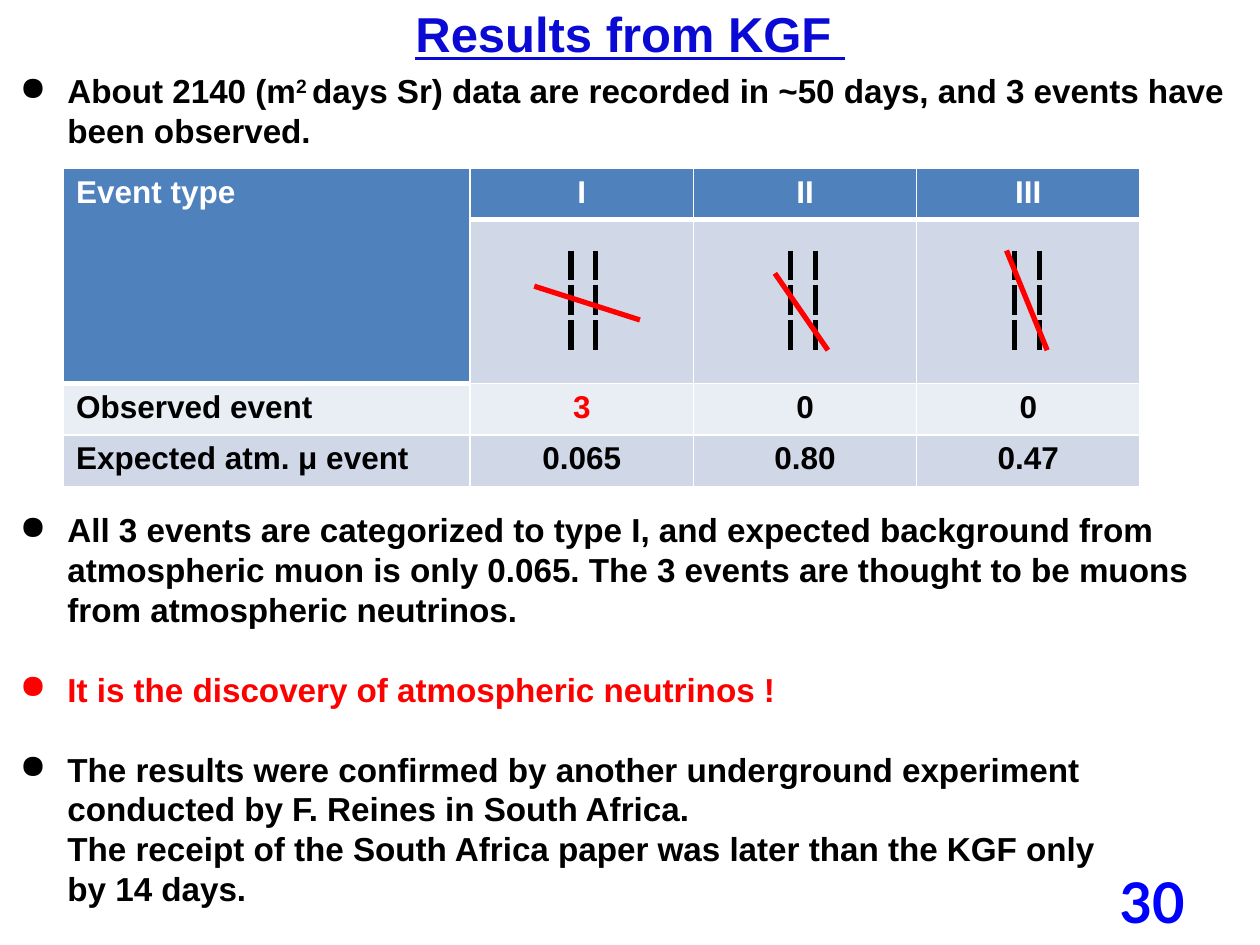
from dataclasses import dataclass

from lxml import etree
from pptx import Presentation
from pptx import util as u
from pptx.dml.color import RGBColor
from pptx.enum import shapes, text
from pptx.oxml import ns


@dataclass(frozen=True)
class Theme:
    font: str = "Arial"
    number_font: str = "Lato"
    title: str = "0A0AD4"
    number: str = "0000FF"
    ink: str = "000000"
    accent: str = "FF0000"
    white: str = "FFFFFF"
    bands: tuple = ("4F81BD", "D0D8E8", "E9EDF4", "D0D8E8")
    title_size: float = 28
    body_size: float = 19
    table_size: float = 18
    number_size: float = 32
    leading: float = 22.8
    thin: float = 1
    thick: float = 3


class SlideBuilder:
    """Holds the theme and the current slide, and draws each kind of element."""

    def __init__(self, slide, theme):
        self.slide = slide
        self.theme = theme

    def style(self, para, size, color, font=None):
        for span in para.runs:
            span.font.name = font or self.theme.font
            span.font.size = u.Pt(size)
            span.font.bold = True
            span.font.color.rgb = RGBColor.from_string(color)

    def frame(self, left, top, width, height):
        box = self.slide.shapes.add_textbox(u.Cm(left), u.Cm(top), u.Cm(width), u.Cm(height))
        box.text_frame.word_wrap = True
        return box.text_frame

    def title(self, words, *place):
        frame = self.frame(*place)
        frame.margin_left = frame.margin_right = frame.margin_top = frame.margin_bottom = 0
        frame.text = words
        para = frame.paragraphs[0]
        para.alignment = text.PP_ALIGN.CENTER
        self.style(para, self.theme.title_size, self.theme.title)
        para.runs[0].font.underline = True

    def page_number(self, words, *place):
        frame = self.frame(*place)
        frame.vertical_anchor = text.MSO_ANCHOR.MIDDLE
        frame.text = words
        para = frame.paragraphs[0]
        para.alignment = text.PP_ALIGN.RIGHT
        self.style(para, self.theme.number_size, self.theme.number, self.theme.number_font)

    def bullets(self, items, *place):
        frame = self.frame(*place)
        for index, (parts, color, lines_before) in enumerate(items):
            para = frame.paragraphs[0] if index == 0 else frame.add_paragraph()
            para.text = parts[0]
            for part in parts[1:]:
                para.add_run().text = part
            self.style(para, self.theme.body_size, color)
            para.line_spacing = u.Pt(self.theme.leading)
            para.space_before = u.Pt(self.theme.leading * lines_before)
            props = para._p.get_or_add_pPr()
            props.set("marL", str(u.Cm(0.96)))
            props.set("indent", str(u.Cm(-0.96)))
            etree.SubElement(props, ns.qn("a:buChar"), char="●")
        return frame

    def superscript(self, span):
        span._r.get_or_add_rPr().set("baseline", "30000")

    def border(self, cell, side, width):
        props = cell._tc.get_or_add_tcPr()
        line = etree.SubElement(props, ns.qn(f"a:ln{side}"), w=str(u.Pt(width)))
        fill = etree.SubElement(line, ns.qn("a:solidFill"))
        etree.SubElement(fill, ns.qn("a:srgbClr"), val=self.theme.white)

    def table(self, rows, widths, heights, left, top):
        shape = self.slide.shapes.add_table(
            len(rows), len(widths), u.Cm(left), u.Cm(top), u.Cm(sum(widths)), u.Cm(sum(heights)))
        table = shape.table
        for column, width in zip(table.columns, widths):
            column.width = u.Cm(width)
        for row, height in zip(table.rows, heights):
            row.height = u.Cm(height)
        for r, row in enumerate(rows):
            for c, words in enumerate(row):
                self.cell(table.cell(r, c), words, r, c)
        table.cell(0, 0).merge(table.cell(1, 0))

    def cell(self, cell, words, r, c):
        heading = r == 0 or (r, c) == (1, 0)
        self.border(cell, "L", self.theme.thin)
        self.border(cell, "R", self.theme.thin)
        if r == 0:
            self.border(cell, "T", self.theme.thin)
        self.border(cell, "B", self.theme.thick if heading else self.theme.thin)
        cell.fill.solid()
        cell.fill.fore_color.rgb = RGBColor.from_string(self.theme.bands[0 if heading else r])
        if words:
            cell.text = words
            para = cell.text_frame.paragraphs[0]
            para.alignment = text.PP_ALIGN.CENTER if c else text.PP_ALIGN.LEFT
            color = self.theme.white if heading else self.theme.ink
            self.style(para, self.theme.table_size, self.theme.accent if words == "3" else color)

    def line(self, parent, start, end, color):
        line = parent.add_connector(
            shapes.MSO_CONNECTOR.STRAIGHT, *(u.Cm(value) for value in (*start, *end)))
        line.line.color.rgb = RGBColor.from_string(color)
        line.line.width = u.Pt(self.theme.thick)
        etree.SubElement(line._element.spPr, ns.qn("a:effectLst"))

    def detector(self, left, top):
        group = self.slide.shapes.add_group_shape()
        for column in range(2):
            for row in range(3):
                x, y = left + 0.5 * column, top + 0.7 * row
                self.line(group.shapes, (x, y), (x, y + 0.6), self.theme.ink)

    def track(self, start, end):
        self.line(self.slide.shapes, start, end, self.theme.accent)


EVENT_ROWS = [
    ("Event type", "I", "II", "III"),
    ("", "", "", ""),
    ("Observed event", "3", "0", "0"),
    ("Expected atm. μ event", "0.065", "0.80", "0.47"),
]
DETECTORS = [11.51, 15.94, 20.45]
TRACKS = [
    ((10.77, 5.77), (12.9, 6.45)),
    ((15.62, 5.51), (16.69, 7.06)),
    ((20.29, 5.05), (21.11, 7.06)),
]


def main():
    theme = Theme()
    deck = Presentation()
    deck.slide_width, deck.slide_height = u.Cm(25.4), u.Cm(19.05)
    page = SlideBuilder(deck.slides.add_slide(deck.slide_layouts[6]), theme)

    page.title("Results from KGF ", 0.69, 0.08, 24.03, 1.19)
    body = page.bullets([
        (("About 2140 (m", "2 ", "days Sr) data are recorded in ~50 days, "
          "and 3 events have been observed."), theme.ink, 0),
        (("All 3 events are categorized to type I, and expected background from "
          "atmospheric muon is only 0.065. The 3 events are thought to be muons "
          "from atmospheric neutrinos.",), theme.ink, 9),
        (("It is the discovery of atmospheric neutrinos !",), theme.accent, 1),
        (("The results were confirmed by another underground experiment\v"
          "conducted by F. Reines in South Africa.\v"
          "The receipt of the South Africa paper was later than the KGF only\v"
          "by 14 days.",), theme.ink, 1),
    ], 0.15, 1.3, 24.82, 17.32)
    page.superscript(body.paragraphs[0].runs[1])

    page.table(EVENT_ROWS, [8.2, 4.5, 4.5, 4.5], [1.04, 3.3, 1.04, 1.04], 1.28, 3.39)
    for left in DETECTORS:
        page.detector(left, 5.05)
    for start, end in TRACKS:
        page.track(start, end)
    page.page_number("30", 18.21, 17.65, 5.92, 1.02)

    deck.save("out.pptx")


if __name__ == "__main__":
    main()
